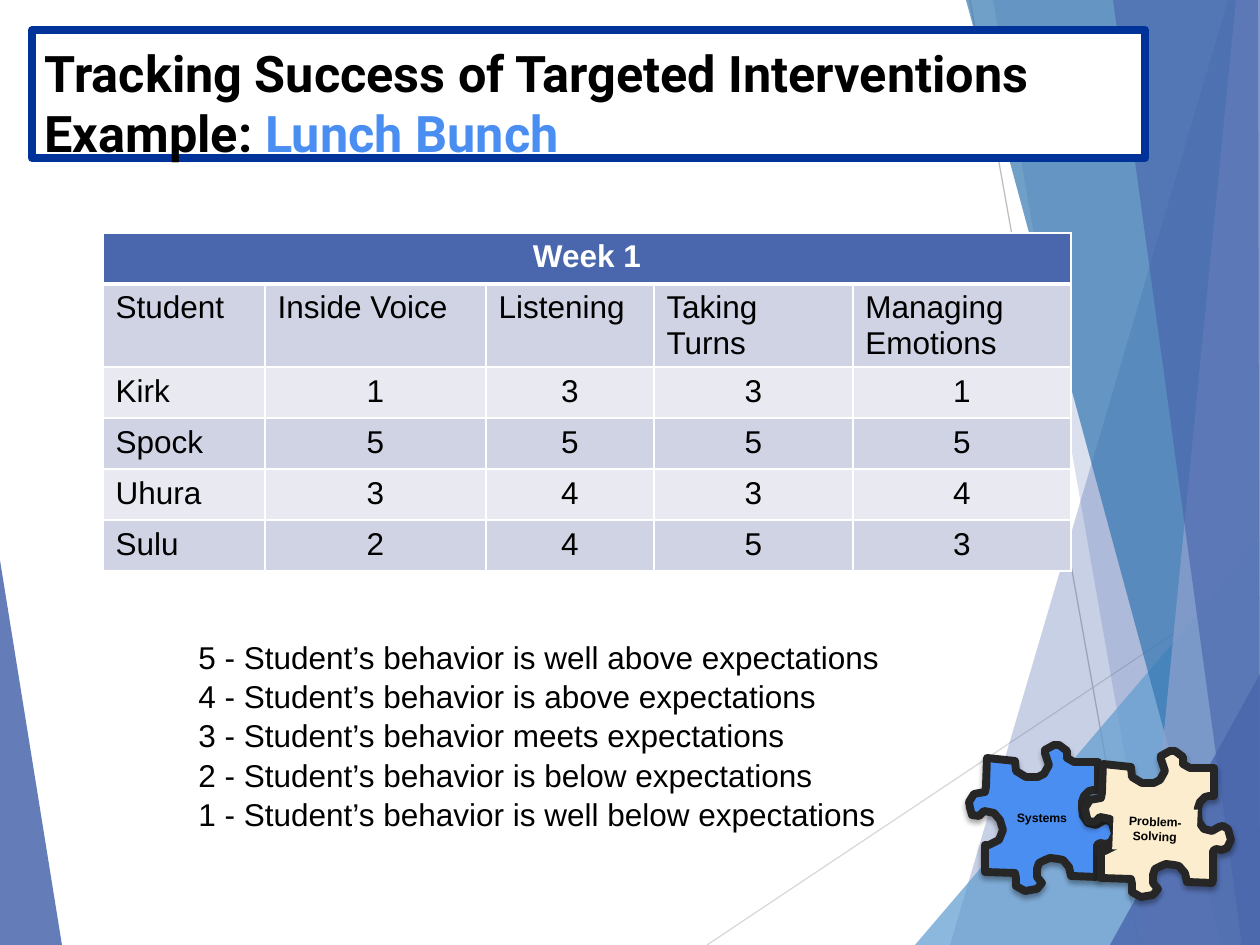
import pptx
import pptx.util
import pptx.dml.color
import pptx.enum.dml
import pptx.enum.shapes
import pptx.enum.text
import pptx.oxml
import pptx.oxml.ns
import lxml.etree

RGBColor = pptx.dml.color.RGBColor
ALIGN = pptx.enum.text.PP_ALIGN
ANCHOR = pptx.enum.text.MSO_ANCHOR
qn = pptx.oxml.ns.qn

SCALE = 914400 / 126  # EMU in one px
WIDTH, HEIGHT = 1260, 945

BLACK = RGBColor(0x00, 0x00, 0x00)
WHITE = RGBColor(0xFF, 0xFF, 0xFF)
NAVY = RGBColor(0x00, 0x33, 0x99)
INDIGO = RGBColor(0x4A, 0x66, 0xAC)
SKY = RGBColor(0x62, 0x9D, 0xD1)
STEEL = RGBColor(0x34, 0x77, 0xB2)
LILAC = RGBColor(0x90, 0xA2, 0xCF)
BRIGHT_BLUE = RGBColor(0x4A, 0x8E, 0xF2)
CREAM = RGBColor(0xFC, 0xED, 0xCE)
CHARCOAL = RGBColor(0x26, 0x26, 0x26)
BAND_DARK = RGBColor(0xD0, 0xD3, 0xE3)
BAND_LIGHT = RGBColor(0xE9, 0xEA, 0xF1)
GREY_LIGHT = RGBColor(0xD9, 0xD9, 0xD9)
GREY = RGBColor(0xBF, 0xBF, 0xBF)

# Background facets: outline, colour, opacity in percent
LEFT_FACET = ([(0, 560), (62, HEIGHT), (0, HEIGHT)], INDIGO, 85)
RIGHT_FACETS = [
    ([(1228, 0), (950, HEIGHT), (WIDTH, HEIGHT), (WIDTH, 0)], INDIGO, 30),
    ([(993, 0), (1158, HEIGHT), (WIDTH, HEIGHT), (WIDTH, 0)], INDIGO, 20),
    ([(915, HEIGHT), (WIDTH, 541), (WIDTH, HEIGHT)], SKY, 72),
    ([(966, 0), (1222, HEIGHT), (WIDTH, HEIGHT), (WIDTH, 0)], STEEL, 70),
    ([(1236, 0), (1143, HEIGHT), (WIDTH, HEIGHT), (WIDTH, 0)], LILAC, 70),
    ([(1113, 0), (1242, HEIGHT), (WIDTH, HEIGHT), (1258, 0)], INDIGO, 65),
    ([(1110, HEIGHT), (WIDTH, 674), (WIDTH, HEIGHT)], INDIGO, 80),
]

# Outline shared by both puzzle pieces, relative to the piece's corner
PIECE = [
    (132, 20), (132, 48), (127, 48), (123, 49), (118, 54), (116, 60), (116, 66), (117, 74),
    (122, 81), (130, 83), (137, 79), (141, 78), (146, 81), (149, 92), (145, 100), (140, 102),
    (134, 101), (131, 103), (131, 132), (130, 135), (105, 134), (103, 125), (97, 118), (92, 117),
    (84, 116), (79, 118), (73, 121), (71, 127), (71, 135), (76, 141), (71, 147), (59, 149),
    (50, 144), (50, 136), (49, 131), (19, 130), (19, 103), (23, 103), (33, 98), (37, 88),
    (34, 78), (28, 71), (18, 69), (13, 74), (6, 73), (4, 66), (3, 60), (8, 52),
    (19, 50), (20, 45), (21, 16), (49, 19), (50, 29), (60, 35), (72, 35), (78, 32),
    (83, 23), (79, 11), (79, 8), (88, 3), (93, 3), (101, 9), (101, 16), (108, 20),
]

COLUMNS = [162, 221, 168, 199, 218]
ROWS = [51, 82, 51, 51, 51, 51]
SCORES = [
    ["Student", "Inside Voice", "Listening", "Taking Turns", "Managing Emotions"],
    ["Kirk", "1", "3", "3", "1"],
    ["Spock", "5", "5", "5", "5"],
    ["Uhura", "3", "4", "3", "4"],
    ["Sulu", "2", "4", "5", "3"],
]
LEVELS = ["is well above", "is above", "meets", "is below", "is well below"]


def px(*lengths):
    return [pptx.util.Emu(round(length * SCALE)) for length in lengths]


def style(span, size, color, bold=False, font="Arial"):
    span.font.size = pptx.util.Pt(size)
    span.font.name = font
    span.font.bold = bold
    span.font.color.rgb = color


def add_polygon(page, points, color, opacity=100):
    builder = page.shapes.build_freeform(*points[0], scale=SCALE)
    builder.add_line_segments(points[1:], close=True)
    shape = builder.convert_to_shape()
    shape.shadow.inherit = False
    shape.fill.solid()
    shape.fill.fore_color.rgb = color
    shape.line.fill.background()
    if opacity < 100:
        fill = shape.element.spPr.find(qn("a:solidFill"))
        lxml.etree.SubElement(fill[0], qn("a:alpha"), val=str(opacity * 1000))
    return shape


def add_line(page, start, end, color):
    line = page.shapes.add_connector(
        pptx.enum.shapes.MSO_CONNECTOR.STRAIGHT, *px(*start, *end))
    line.line.color.rgb = color
    line.line.width = pptx.util.Pt(0.75)
    lxml.etree.SubElement(line.element.spPr, qn("a:effectLst"))


def add_background(page):
    add_polygon(page, *LEFT_FACET)
    add_line(page, (707, HEIGHT), (WIDTH, 576), GREY_LIGHT)
    add_line(page, (970, 0), (1139, HEIGHT), GREY)
    for facet in RIGHT_FACETS:
        add_polygon(page, *facet)


def add_title(page):
    title = page.shapes.title
    title.element.getparent().append(title.element)  # in front of the facets
    title.left, title.top, title.width, title.height = px(32, 30, 1113, 128)
    title.fill.solid()
    title.fill.fore_color.rgb = WHITE
    title.line.color.rgb = NAVY
    title.line.width = pptx.util.Pt(4.5)
    lxml.etree.SubElement(title.line._get_or_add_ln(), qn("a:round"))
    frame = title.text_frame
    frame.auto_size = pptx.enum.text.MSO_AUTO_SIZE.NONE
    frame.vertical_anchor = ANCHOR.TOP
    frame.margin_top, frame.margin_bottom = px(12, 0)
    para = frame.paragraphs[0]
    para.text = "Tracking Success of Targeted Interventions\vExample: "
    para.alignment = ALIGN.LEFT
    para.add_run().text = "Lunch Bunch"
    for span in para.runs:
        style(span, 28.8, BLACK, True, "Roboto")
    para.runs[-1].font.color.rgb = BRIGHT_BLUE


def add_borders(cell, **widths):
    properties = cell._tc.get_or_add_tcPr()
    for index, side in enumerate("LRTB"):
        width = pptx.util.Pt(widths.get(side, 1))
        properties.insert(index, pptx.oxml.parse_xml(
            f'<a:ln{side} {pptx.oxml.ns.nsdecls("a")} w="{width}"><a:solidFill>'
            f'<a:srgbClr val="{WHITE}"/></a:solidFill></a:ln{side}>'))


def fill_cell(cell, text, fill, color=BLACK, bold=False, centred=False):
    cell.fill.solid()
    cell.fill.fore_color.rgb = fill
    para = cell.text_frame.paragraphs[0]
    para.text = text
    para.alignment = ALIGN.CENTER if centred else ALIGN.LEFT
    for span in para.runs:
        style(span, 18, color, bold)


def add_scores(page):
    frame = page.shapes.add_table(
        len(ROWS), len(COLUMNS), *px(103, 233, sum(COLUMNS), sum(ROWS)))
    table = frame.table
    for column, width in zip(table.columns, px(*COLUMNS)):
        column.width = width
    for row, height in zip(table.rows, px(*ROWS)):
        row.height = height
    table.cell(0, 0).merge(table.cell(0, len(COLUMNS) - 1))
    fill_cell(table.cell(0, 0), "Week 1", INDIGO, WHITE, True, True)
    for column in range(len(COLUMNS)):
        add_borders(table.cell(0, column), B=3)
    for row, texts in enumerate(SCORES, 1):
        band = BAND_DARK if row % 2 else BAND_LIGHT
        for column, text in enumerate(texts):
            cell = table.cell(row, column)
            fill_cell(cell, text, band, centred=text.isdigit())
            add_borders(cell, T=3 if row == 1 else 1)


def add_piece(page, left, top, color):
    piece = add_polygon(page, [(left + x, top + y) for x, y in PIECE], color)
    piece.line.color.rgb = CHARCOAL
    piece.line.width = pptx.util.Pt(4.5)
    effects = piece.element.spPr.find(qn("a:effectLst"))
    effects.append(pptx.oxml.parse_xml(
        f'<a:outerShdw {pptx.oxml.ns.nsdecls("a")} blurRad="38100" dist="25400" dir="5400000">'
        '<a:srgbClr val="000000"><a:alpha val="35000"/></a:srgbClr></a:outerShdw>'))


def add_text(page, bounds, lines, size, bold=False, align=ALIGN.LEFT):
    box = page.shapes.add_textbox(*px(*bounds))
    box.text_frame.word_wrap = True
    box.text_frame.text = "\n".join(lines)
    for para in box.text_frame.paragraphs:
        para.alignment = align
        style(para.runs[0], size, BLACK, bold)
    return box


def add_puzzle(page):
    add_piece(page, 966, 742, BRIGHT_BLUE)
    label = add_text(page, (999, 804, 86, 28), ["Systems"], 7, True, ALIGN.CENTER)
    label.rotation = 0.8
    add_piece(page, 1082, 748, CREAM)
    label = add_text(page, (1113, 808, 84, 43), ["Problem-Solving"], 7, True, ALIGN.CENTER)
    label.rotation = 2.3
    label.fill.solid()
    label.fill.fore_color.rgb = CREAM


def add_legend(page):
    lines = [f"{5 - index} - Student’s behavior {level} expectations"
             for index, level in enumerate(LEVELS)]
    legend = add_text(page, (60, 630, 1024, 242), lines, 18)
    for para in legend.text_frame.paragraphs:
        para.line_spacing = 1.04
        para._p.get_or_add_pPr().set("marL", str(px(126)[0]))


def main():
    deck = pptx.Presentation()
    deck.slide_width, deck.slide_height = px(WIDTH, HEIGHT)
    page = deck.slides.add_slide(deck.slide_layouts[5])
    add_background(page)
    add_title(page)
    add_scores(page)
    add_puzzle(page)
    add_legend(page)
    deck.save("out.pptx")


if __name__ == "__main__":
    main()
